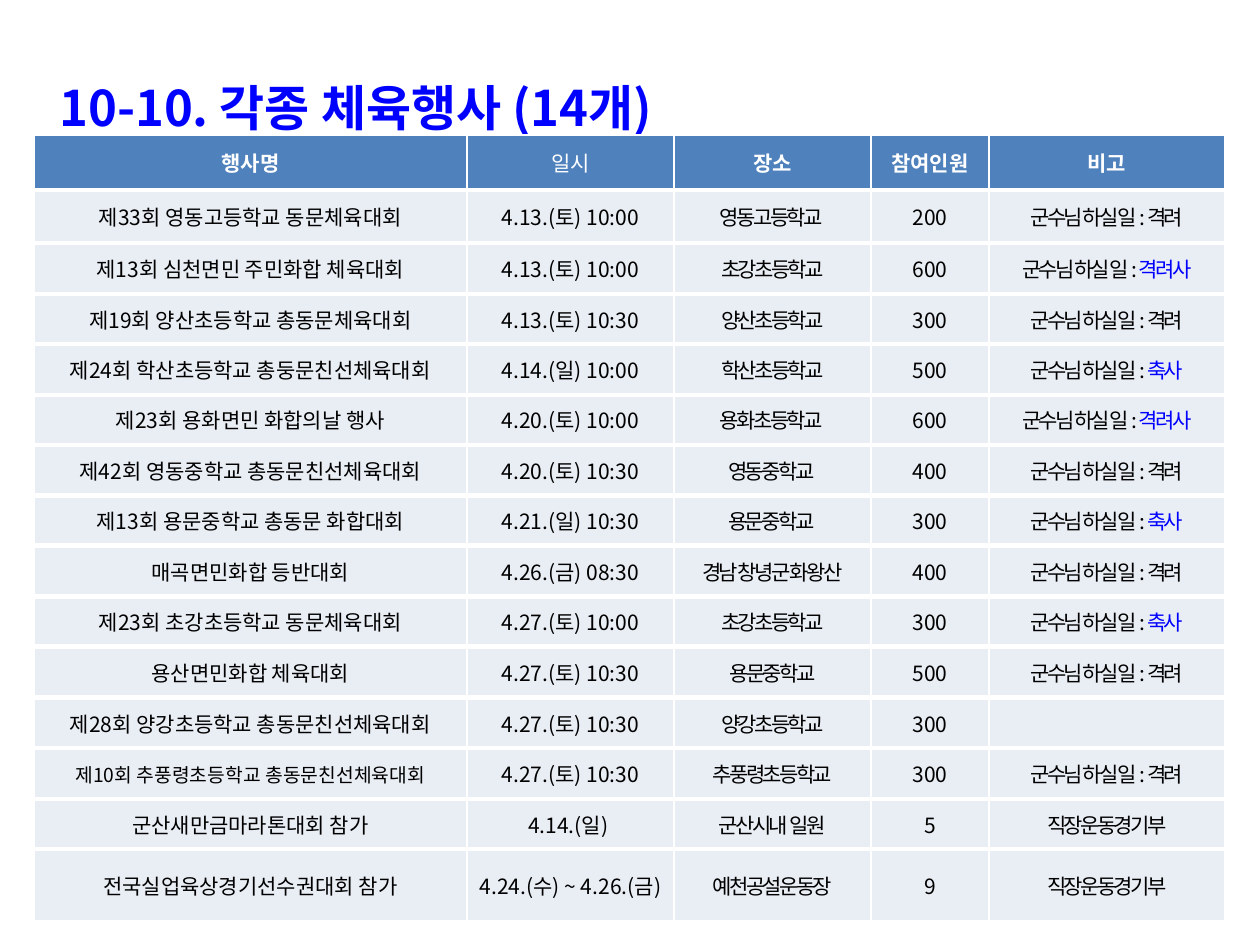
from lxml import etree
from pptx import Presentation
from pptx.dml.color import RGBColor
from pptx.enum.text import MSO_ANCHOR, PP_ALIGN
from pptx.oxml.ns import qn
from pptx.util import Emu, Pt

PX = 914400 // 126
FONT = "Noto Sans CJK KR"
CENTER = PP_ALIGN.CENTER
TOP = MSO_ANCHOR.TOP
MIDDLE = MSO_ANCHOR.MIDDLE
COLORS = {
    "blue": "0000FF",
    "header": "4F81BD",
    "body": "E9EDF4",
    "white": "FFFFFF",
    "black": "000000",
}
TIGHT = -150  # letter spacing in hundredths of a point

COL_WIDTHS = [433, 207, 197, 118, 236]
HEADERS = ["행사명", "일시", "장소", "참여인원", "비고"]
DUTY = "군수님 하실 일 : "
TEAM = "직장운동경기부"

# Name, time, place, participants, remark (plain part, highlighted part)
EVENTS = [
    ("제33회 영동고등학교 동문체육대회", "4.13.(토) 10:00", "영동고등학교 ", 200, (DUTY + "격려", "")),
    ("제13회 심천면민 주민화합 체육대회", "4.13.(토) 10:00", "초강초등학교", 600, (DUTY, "격려사")),
    ("제19회 양산초등학교 총동문체육대회", "4.13.(토) 10:30", "양산초등학교", 300, (DUTY + "격려", "")),
    ("제24회 학산초등학교 총둥문친선체육대회", "4.14.(일) 10:00", "학산초등학교", 500, (DUTY, "축사")),
    ("제23회 용화면민 화합의날 행사", "4.20.(토) 10:00", "용화초등학교 ", 600, (DUTY, "격려사")),
    ("제42회 영동중학교 총동문친선체육대회", "4.20.(토) 10:30", "영동중학교 ", 400, (DUTY + "격려", "")),
    ("제13회 용문중학교 총동문 화합대회", "4.21.(일) 10:30", "용문중학교 ", 300, (DUTY, "축사")),
    ("매곡면민화합 등반대회", "4.26.(금) 08:30", "경남 창녕군 화왕산", 400, (DUTY + "격려", "")),
    ("제23회 초강초등학교 동문체육대회", "4.27.(토) 10:00", "초강초등학교", 300, (DUTY, "축사")),
    ("용산면민화합 체육대회", "4.27.(토) 10:30", "용문중학교", 500, (DUTY + "격려", "")),
    ("제28회 양강초등학교 총동문친선체육대회", "4.27.(토) 10:30", "양강초등학교", 300, ("", "")),
    ("제10회 추풍령초등학교 총동문친선체육대회", "4.27.(토) 10:30", "추풍령초등학교", 300, (DUTY + "격려", "")),
    ("군산새만금마라톤대회 참가", "4.14.(일) ", "군산시내  일원", 5, (TEAM, "")),
    ("전국실업육상경기선수권대회 참가", "4.24.(수) ~ 4.26.(금)", "예천공설운동장", 9, (TEAM, "")),
]
LONG_NAME = EVENTS[11][0]


def px(n):
    return Emu(n * PX)


def add_text(p, text, size=12, color="black", bold=False, spacing=0):
    r = p.add_run()
    r.text = text
    r.font.name = FONT
    r.font.size = Pt(size)
    r.font.bold = bold
    r.font.color.rgb = RGBColor.from_string(COLORS[color])
    rPr = r.font._element
    etree.SubElement(rPr, qn("a:ea"), typeface=FONT)
    if spacing:
        rPr.set("spc", str(spacing))


def add_title(slide, text):
    tf = slide.shapes.add_textbox(px(39), px(26), px(1221), px(110)).text_frame
    tf.word_wrap = True
    tf.vertical_anchor = TOP
    # The inset sets the title just above the table
    tf.margin_top = px(52)
    tf.margin_bottom = 0
    p = tf.paragraphs[0]
    pPr = p._p.get_or_add_pPr()
    pPr.set("marL", str(px(71)))
    pPr.set("indent", str(px(-63)))
    add_text(p, text, size=28, color="blue", bold=True)


def set_borders(cell, **widths):
    tcPr = cell._tc.get_or_add_tcPr()
    for side, width in widths.items():
        ln = etree.SubElement(tcPr, qn(f"a:ln{side}"), w=str(Pt(width)))
        fill = etree.SubElement(ln, qn("a:solidFill"))
        etree.SubElement(fill, qn("a:srgbClr"), val=COLORS["white"])


def style_cell(cell, fill, top):
    set_borders(cell, L=1, R=1, T=top, B=3)
    cell.fill.solid()
    cell.fill.fore_color.rgb = RGBColor.from_string(COLORS[fill])
    cell.vertical_anchor = MIDDLE
    p = cell.text_frame.paragraphs[0]
    p.alignment = CENTER
    return p


def add_event_table(slide):
    # Body rows alternate between 51 and 50 px; the last holds two lines
    heights = [55, 53] + [51 - i % 2 for i in range(len(EVENTS) - 2)] + [73]
    table = slide.shapes.add_table(
        len(heights), len(COL_WIDTHS), px(34), px(135),
        px(sum(COL_WIDTHS)), px(sum(heights))).table
    table.first_row = False
    table.horz_banding = False
    for col, width in zip(table.columns, COL_WIDTHS):
        col.width = px(width)
    for row, height in zip(table.rows, heights):
        row.height = px(height)

    # Header row
    for c, label in enumerate(HEADERS):
        p = style_cell(table.cell(0, c), "header", top=1)
        add_text(p, label, color="white", bold=label != "일시")

    # Event rows
    for r, (name, when, place, count, (remark, highlight)) in enumerate(EVENTS, 1):
        paragraphs = [style_cell(table.cell(r, c), "body", top=3)
                      for c in range(len(COL_WIDTHS))]
        add_text(paragraphs[0], name, size=11 if name == LONG_NAME else 12)
        add_text(paragraphs[1], when)
        add_text(paragraphs[2], place, spacing=TIGHT)
        add_text(paragraphs[3], str(count))
        if remark:
            add_text(paragraphs[4], remark, spacing=TIGHT)
        if highlight:
            add_text(paragraphs[4], highlight, color="blue", spacing=TIGHT)


def main():
    prs = Presentation()
    prs.slide_width, prs.slide_height = px(1260), px(945)
    slide = prs.slides.add_slide(prs.slide_layouts[6])
    add_title(slide, "10-10. 각종 체육행사 (14개)")
    add_event_table(slide)
    prs.save("out.pptx")


if __name__ == "__main__":
    main()
